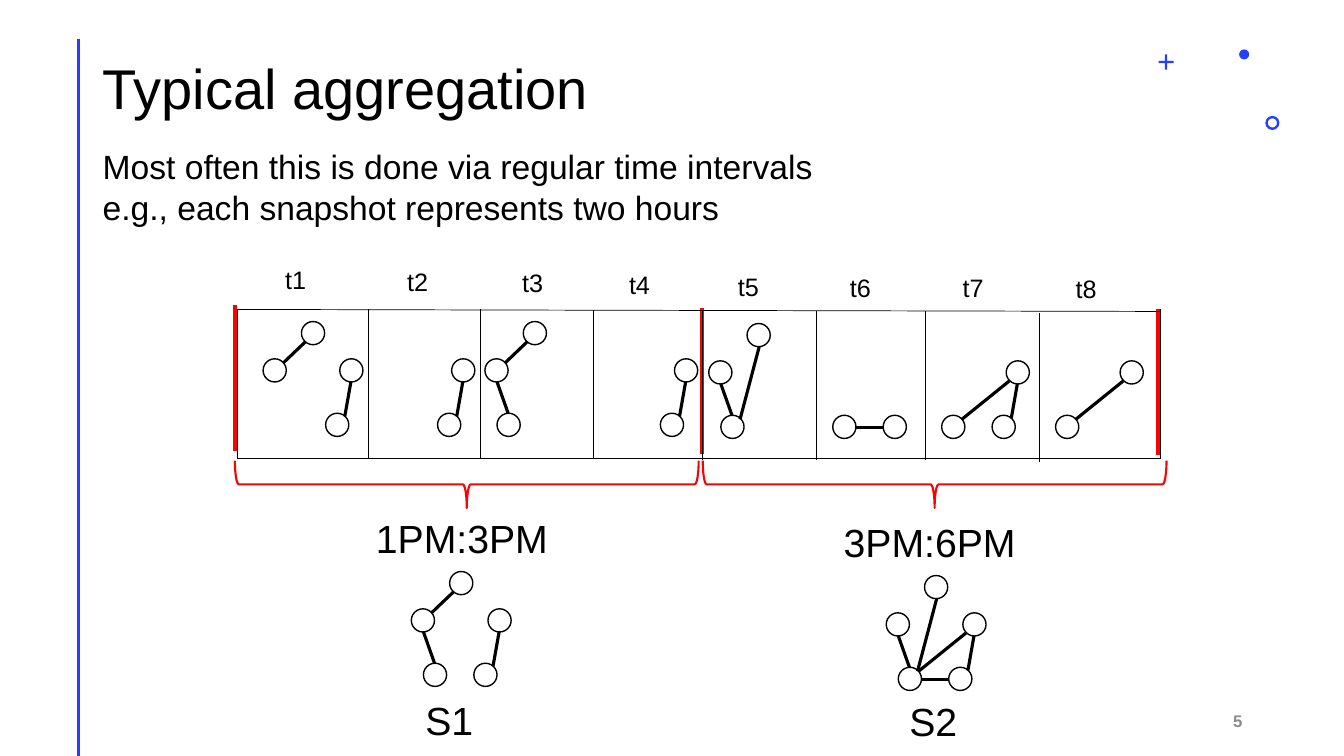
from collections import namedtuple
from dataclasses import dataclass

from lxml import etree
from pptx import Presentation
from pptx import util as u
from pptx.dml.color import RGBColor
from pptx.enum import shapes, text
from pptx.oxml.ns import qn


@dataclass(frozen=True)
class Theme:
    font: str = "Arial"
    ink: str = "000000"
    paper: str = "FFFFFF"
    accent: str = "243FFF"
    mark: str = "FF0000"
    muted: str = "8C8C8C"
    title: int = 40
    body: int = 24
    caption: int = 28
    label: int = 18
    number: int = 12


THEME = Theme()
Box = namedtuple("Box", "left top width height")
Interval = namedtuple("Interval", "name left top label graph edges")
Snapshot = namedtuple("Snapshot", "hours name left hours_top graph name_at edges")

# Node positions (top left) and edge ends inside a five-node graph
NODE_SIZE = 0.23
NODES = {"L": (0, 0.37), "T": (0.38, 0), "R": (0.76, 0.37),
         "BL": (0.12, 0.91), "BR": (0.62, 0.91)}
EDGES = {
    "T-L": ((0.42, 0.2), (0.2, 0.41)),
    "L-BL": ((0.12, 0.6), (0.23, 0.91)),
    "BR-R": ((0.81, 0.94), (0.87, 0.6)),
    "T-BL": ((0.5, 0.23), (0.31, 0.95)),
    "BL-BR": ((0.35, 1.03), (0.62, 1.03)),
    "BL-R": ((0.32, 0.95), (0.79, 0.57)),
}

# Offsets are from the top left of the timeline
INTERVALS = [
    Interval("t1", 0, 0, (0.38, -0.5), (0.26, 0.12), ["T-L", "BR-R"]),
    Interval("t2", 1.3, 0, (1.59, -0.48), (1.37, 0.12), ["BR-R"]),
    Interval("t3", 2.41, 0, (2.73, -0.47), (2.46, 0.12), ["T-L", "L-BL"]),
    Interval("t4", 3.54, 0.01, (3.79, -0.45), (3.58, 0.12), ["BR-R"]),
    Interval("t5", 4.62, 0.02, (4.87, -0.43), (4.68, 0.14), ["T-BL", "L-BL"]),
    Interval("t6", 5.75, 0.02, (5.98, -0.42), (5.79, 0.14), ["BL-BR"]),
    Interval("t7", 6.83, 0.02, (7.1, -0.42), (6.87, 0.14), ["BL-R", "BR-R"]),
    Interval("t8", 7.96, 0.04, (8.22, -0.41), (8, 0.14), ["BL-R"]),
]
BOUNDARIES = [(-0.02, -0.04), (4.61, -0.01), (9.14, 0)]

# Offsets are from the top left of each brace
SNAPSHOTS = [
    Snapshot("1PM:3PM", "S1", 2.33, 0.48, (1.75, 1.1), (1.79, 2.29),
             ["T-L", "L-BL", "BR-R"]),
    Snapshot("3PM:6PM", "S2", 6.97, 0.52, (1.82, 1.14), (1.95, 2.3),
             ["T-BL", "L-BL", "BR-R", "BL-BR", "BL-R"]),
]


def color(value):
    return RGBColor.from_string(value)


def add_line(page, start, end, tint, weight):
    ends = [u.Inches(value) for value in (*start, *end)]
    line = page.shapes.add_connector(shapes.MSO_CONNECTOR.STRAIGHT, *ends)
    line.line.color.rgb = color(tint)
    line.line.width = u.Pt(weight)
    etree.SubElement(line._element.spPr, qn("a:effectLst"))


def add_figure(page, kind, box, fill=None, outline=None, weight=1):
    figure = page.shapes.add_shape(kind, *[u.Inches(value) for value in box])
    figure.shadow.inherit = False
    if fill:
        figure.fill.solid()
        figure.fill.fore_color.rgb = color(fill)
    else:
        figure.fill.background()
    if outline:
        figure.line.color.rgb = color(outline)
        figure.line.width = u.Pt(weight)
    else:
        figure.line.fill.background()
    return figure


def add_text(page, box, words, size, tint=THEME.ink, bold=False,
             align=text.PP_ALIGN.LEFT, anchor=text.MSO_ANCHOR.TOP, spacing=None):
    area = page.shapes.add_textbox(*[u.Inches(value) for value in box])
    frame = area.text_frame
    frame.word_wrap = True
    frame.vertical_anchor = anchor
    frame.text = words
    for para in frame.paragraphs:
        para.alignment = align
        para.line_spacing = spacing
        for span in para.runs:
            span.font.name = THEME.font
            span.font.size = u.Pt(size)
            span.font.bold = bold
            span.font.color.rgb = color(tint)


def draw_frame(page, box):
    # Side rule, corner ornaments and page number
    add_line(page, (box.left + 0.78, box.top + 0.39),
             (box.left + 0.78, box.top + box.height), THEME.accent, 2)
    right = box.left + box.width
    kinds = shapes.MSO_SHAPE
    ornaments = [(kinds.CROSS, 1.84, 0.54, 0.15, 0.43),
                 (kinds.DONUT, 0.78, 1.15, 0.14, 0.17),
                 (kinds.OVAL, 1.04, 0.49, 0.1, None)]
    for kind, inset, drop, size, thickness in ornaments:
        ornament = add_figure(page, kind, Box(right - inset, box.top + drop, size, size),
                              fill=THEME.accent)
        if thickness:
            ornament.adjustments[0] = thickness
    add_text(page, Box(right - 3.91, box.top + 6.95, 3, 0.4), "5", THEME.number,
             THEME.muted, True, text.PP_ALIGN.RIGHT, text.MSO_ANCHOR.MIDDLE)


def draw_heading(page, box):
    add_text(page, Box(box.left, box.top, box.width, 0.88), "Typical aggregation",
             THEME.title, anchor=text.MSO_ANCHOR.MIDDLE, spacing=0.9)
    add_text(page, Box(box.left, box.top + 0.93, 8.31, 0.91),
             "Most often this is done via regular time intervals\n"
             "e.g., each snapshot represents two hours", THEME.body)


def draw_graph(page, left, top, edges):
    used = {node for edge in edges for node in edge.split("-")}
    for node, (across, down) in NODES.items():
        if node in used:
            add_figure(page, shapes.MSO_SHAPE.OVAL,
                       Box(left + across, top + down, NODE_SIZE, NODE_SIZE),
                       THEME.paper, THEME.ink)
    for edge in edges:
        start, end = [(left + across, top + down) for across, down in EDGES[edge]]
        add_line(page, start, end, THEME.ink, 2.25)


def draw_timeline(page, box):
    right, bottom = box.left + box.width, box.top + box.height
    # Red snapshot boundaries
    for across, down in BOUNDARIES:
        start = (box.left + across, box.top + down)
        add_line(page, start, (start[0], start[1] + 1.44), THEME.mark, 3)
    # Outline
    add_line(page, (box.left, box.top), (right, box.top + 0.02), THEME.ink, 0.5)
    add_line(page, (box.left, bottom), (right, bottom), THEME.ink, 0.5)
    add_line(page, (right, box.top), (right, bottom), THEME.ink, 0.5)
    # Intervals with their left border, label and graph
    for interval in INTERVALS:
        start = (box.left + interval.left, box.top + interval.top)
        add_line(page, start, (start[0], start[1] + 1.47), THEME.ink, 0.5)
        across, down = interval.label
        add_text(page, Box(box.left + across, box.top + down, 0.62, 0.55),
                 interval.name, THEME.label)
        across, down = interval.graph
        draw_graph(page, box.left + across, box.top + down, interval.edges)


def draw_snapshot(page, box, snapshot):
    # A left brace turned to point down, centred on the top of the box
    depth = 0.47
    brace = add_figure(page, shapes.MSO_SHAPE.LEFT_BRACE,
                       Box(box.left + (box.width - depth) / 2,
                           box.top + (depth - box.width) / 2, depth, box.width),
                       outline=THEME.mark, weight=1.5)
    brace.rotation = 270
    # Hours, aggregated graph and name
    add_text(page, Box(box.left + 1.3, box.top + snapshot.hours_top, 2.5, 0.57),
             snapshot.hours, THEME.caption)
    across, down = snapshot.graph
    draw_graph(page, box.left + across, box.top + down, snapshot.edges)
    across, down = snapshot.name_at
    add_text(page, Box(box.left + across, box.top + down, 1.13, 0.57),
             snapshot.name, THEME.caption)


def main():
    deck = Presentation()
    deck.slide_width, deck.slide_height = u.Inches(13.33), u.Inches(7.5)
    page = deck.slides.add_slide(deck.slide_layouts[6])
    draw_frame(page, Box(0, 0, 13.33, 7.5))
    draw_heading(page, Box(0.92, 0.47, 11.5, 1.84))
    draw_timeline(page, Box(2.35, 3.07, 9.16, 1.48))
    for snapshot in SNAPSHOTS:
        draw_snapshot(page, Box(snapshot.left, 4.57, 4.6, 2.87), snapshot)
    deck.save("out.pptx")


if __name__ == "__main__":
    main()
